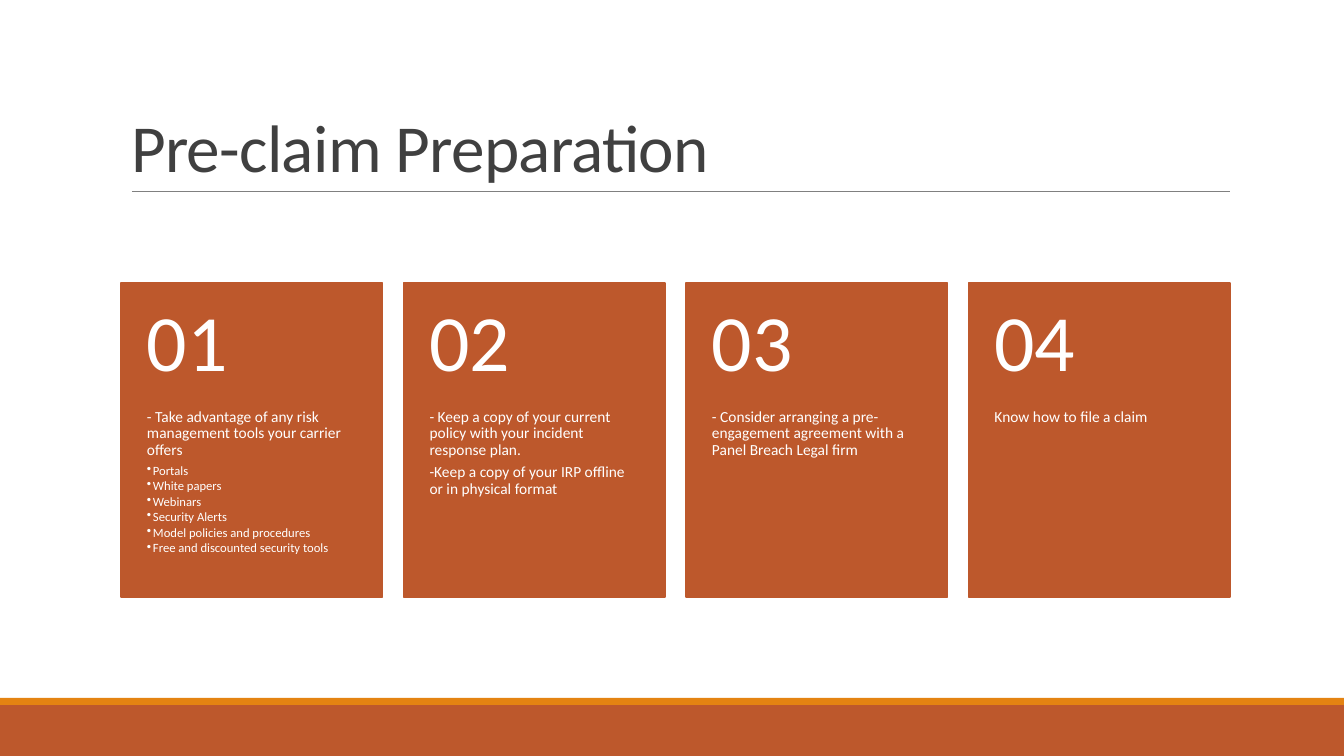
from lxml.etree import SubElement
from pptx import Presentation
from pptx.dml.color import RGBColor
from pptx.enum.shapes import MSO_CONNECTOR as Connector, MSO_SHAPE as Shape
from pptx.enum.text import MSO_ANCHOR as Anchor, MSO_AUTO_SIZE as AutoSize, PP_ALIGN as Align
from pptx.oxml.ns import qn
from pptx.util import Pt

EMU_PER_PX = 914400 / 100.8
SLIDE_WIDTH, SLIDE_HEIGHT = 1344, 756
FONT = "Calibri"
RUST = RGBColor(0xBD, 0x58, 0x2C)
ORANGE = RGBColor(0xE4, 0x83, 0x12)
GRAY = RGBColor(0x80, 0x80, 0x80)
DARK = RGBColor(0x40, 0x40, 0x40)
WHITE = RGBColor(0xFF, 0xFF, 0xFF)

CARDS = [
    (["- Take advantage of any risk management tools your carrier offers"],
     ["Portals", "White papers", "Webinars", "Security Alerts",
      "Model policies and procedures", "Free and discounted security tools"]),
    (["- Keep a copy of your current policy with your incident response plan.",
      "-Keep a copy of your IRP offline or in physical format"], []),
    (["- Consider arranging a pre-engagement agreement with a Panel Breach Legal firm"], []),
    (["Know how to file a claim"], []),
]


def px(*lengths):
    """Turn pixel lengths into EMU."""
    return [round(length * EMU_PER_PX) for length in lengths]


def add_rectangle(slide, box, color, line_width=None):
    """Add a filled rectangle, outlined in its own colour if a width is given."""
    shape = slide.shapes.add_shape(Shape.RECTANGLE, *px(*box))
    shape.shadow.inherit = False
    shape.fill.solid()
    shape.fill.fore_color.rgb = color
    if line_width is None:
        shape.line.fill.background()
    else:
        shape.line.color.rgb = color
        shape.line.width = Pt(line_width)


def add_run(paragraph, text, size, color):
    """Add one formatted run and return it."""
    run = paragraph.add_run()
    run.text = text
    run.font.name = FONT
    run.font.size = Pt(size)
    run.font.color.rgb = color
    return run


def add_text(slide, box, margins, anchor, lines):
    """Add a text box from lines of text, size, space after and bullet flag."""
    frame = slide.shapes.add_textbox(*px(*box)).text_frame
    frame.word_wrap = True
    frame.auto_size = AutoSize.NONE
    frame.vertical_anchor = anchor
    (frame.margin_left, frame.margin_top,
     frame.margin_right, frame.margin_bottom) = px(*margins)
    for index, (text, size, space_after, bulleted) in enumerate(lines):
        paragraph = frame.add_paragraph() if index else frame.paragraphs[0]
        paragraph.line_spacing = 0.9
        paragraph.space_after = Pt(space_after)
        if bulleted:
            paragraph.level = 1
            properties = paragraph._p.get_or_add_pPr()
            indent, = px(6)
            properties.set("marL", str(indent))
            properties.set("indent", str(-indent))
            SubElement(properties, qn("a:buChar")).set("char", "•")
        add_run(paragraph, text, size, WHITE)


def add_title(slide, box, text):
    """Fill the title placeholder and rule a line beneath it."""
    left, top, width, height = box
    title = slide.shapes.title
    title.left, title.top, title.width, title.height = px(*box)
    frame = title.text_frame
    frame.word_wrap = True
    frame.auto_size = AutoSize.NONE
    frame.vertical_anchor = Anchor.BOTTOM
    paragraph = frame.paragraphs[0]
    paragraph.alignment = Align.LEFT
    paragraph.line_spacing = 0.85
    run = add_run(paragraph, text, 48, DARK)
    run.font._element.set("spc", "-50")
    bottom = top + height
    rule = slide.shapes.add_connector(
        Connector.STRAIGHT, *px(left + 11, bottom, left + width, bottom))
    rule.line.color.rgb = GRAY
    rule.line.width = Pt(0.5)
    SubElement(rule._element.spPr, qn("a:effectLst"))


def add_card(slide, box, number, statements, bullets):
    """Draw a numbered card with statements and optional bullets."""
    left, top, width, height = box
    heading_height = round(height * 0.4)
    add_rectangle(slide, box, RUST, 1.25)
    lines = [(text, 11, 3.85, False) for text in statements]
    lines += [(text, 9, 1.35, True) for text in bullets]
    add_text(slide, (left, top + heading_height, width, height - heading_height),
             (26, 0, 26, 36), Anchor.TOP, lines)
    add_text(slide, (left, top, width, heading_height),
             (26, 18, 26, 18), Anchor.MIDDLE, [(f"{number:02}", 57, 0, False)])


def add_cards(slide, box, gap):
    """Spread the cards evenly across the box."""
    left, top, width, height = box
    card_width = (width - gap * (len(CARDS) - 1)) / len(CARDS)
    for index, (statements, bullets) in enumerate(CARDS):
        card_left = left + index * (card_width + gap)
        add_card(slide, (card_left, top, card_width, height),
                 index + 1, statements, bullets)


def add_footer(slide, box, stripe_height):
    """Draw the bottom band with a thin stripe along its top."""
    left, top, width, height = box
    add_rectangle(slide, (left, top + stripe_height, width, height - stripe_height), RUST)
    add_rectangle(slide, (left, top, width, stripe_height), ORANGE)


def main():
    """Build and save the slide."""
    presentation = Presentation()
    presentation.slide_width, presentation.slide_height = px(SLIDE_WIDTH, SLIDE_HEIGHT)
    slide = presentation.slides.add_slide(presentation.slide_layouts[5])
    add_footer(slide, (0, 698, SLIDE_WIDTH, 58), 7)
    add_title(slide, (121, 31, 1109, 160), "Pre-claim Preparation")
    add_cards(slide, (121, 283, 1109, 314), 21)
    presentation.save("out.pptx")


if __name__ == "__main__":
    main()
